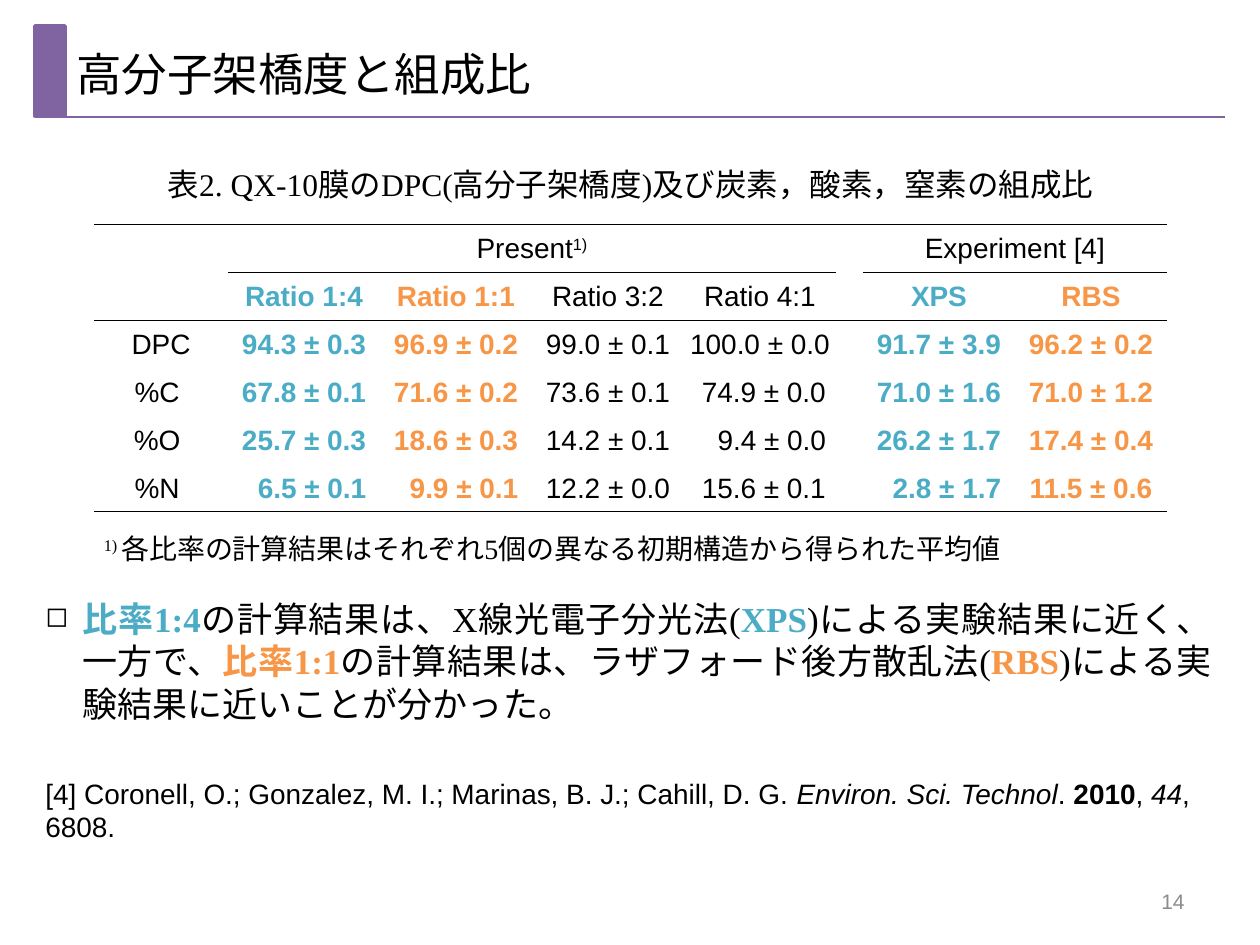
"""Build the slide on polymer cross-linking degree and composition."""
from lxml.etree import SubElement
from pptx import Presentation
from pptx.dml.color import RGBColor
from pptx.enum.lang import MSO_LANGUAGE_ID
from pptx.enum.shapes import MSO_CONNECTOR, MSO_SHAPE
from pptx.enum.text import MSO_ANCHOR, PP_ALIGN
from pptx.oxml.ns import qn
from pptx.util import Pt

EMU_PER_PX = 914400 // 126
BLACK = RGBColor(0, 0, 0)
WHITE = RGBColor(0xFF, 0xFF, 0xFF)
GRAY = RGBColor(0x8C, 0x8C, 0x8C)
PURPLE = RGBColor(0x80, 0x64, 0xA2)
TEAL = RGBColor(0x4B, 0xAC, 0xC6)
ORANGE = RGBColor(0xF7, 0x96, 0x46)
SANS, SERIF = "Arial", "Times New Roman"
BOLD, ITALIC, RAISED = "bold", "italic", "raised"
NO_STYLE = "{2D5ABB26-0587-4C30-8999-92F81FD0307C}"

TITLE = [("高分子架橋度と組成比",)]
CAPTION = [("表2. QX-10膜のDPC(高分子架橋度)及び炭素，酸素，窒素の組成比",)]
NOTE = [("1) ", BLACK, RAISED), ("各比率の計算結果はそれぞれ5個の異なる初期構造から得られた平均値",)]
FINDING = [
    ("比率1:4", TEAL, BOLD), ("の計算結果は、X線光電子分光法(",),
    ("XPS", TEAL, BOLD), (")による実験結果に近く、一方で、",),
    ("比率1:1", ORANGE, BOLD), ("の計算結果は、ラザフォード後方散乱法(",),
    ("RBS", ORANGE, BOLD), (")による実験結果に近いことが分かった。",),
]
REFERENCE = [
    ("[4] Coronell, O.; Gonzalez, M. I.; Marinas, B. J.; Cahill, D. G. ",),
    ("Environ. Sci. Technol", BLACK, ITALIC), (". ",), ("2010", BLACK, BOLD),
    (", ",), ("44", BLACK, ITALIC), (", 6808.",),
]
PAGE_NUMBER = [("14", GRAY)]

GROUPS = [
    (1, 4, [("Present",), ("1)", BLACK, RAISED)]),
    (6, 7, [("Experiment [4]",)]),
]
ROWS = [
    ["", "Ratio 1:4", "Ratio 1:1", "Ratio 3:2", "Ratio 4:1", "", "XPS", "RBS"],
    ["DPC", "94.3 ± 0.3", "96.9 ± 0.2", "99.0 ± 0.1", "100.0 ± 0.0", "", "91.7 ± 3.9", "96.2 ± 0.2"],
    ["%C ", "67.8 ± 0.1", "71.6 ± 0.2", "73.6 ± 0.1", " 74.9 ± 0.0", "", "71.0 ± 1.6", "71.0 ± 1.2"],
    ["%O ", "25.7 ± 0.3", "18.6 ± 0.3", "14.2 ± 0.1", " 9.4 ± 0.0", "", "26.2 ± 1.7", "17.4 ± 0.4"],
    ["%N ", "6.5 ± 0.1", "9.9 ± 0.1", "12.2 ± 0.0", " 15.6 ± 0.1", "", "2.8 ± 1.7", "11.5 ± 0.6"],
]
COLUMN_COLORS = {1: TEAL, 2: ORANGE, 6: TEAL, 7: ORANGE}
COLUMN_WIDTHS = [134, 152, 152, 152, 152, 27, 152, 152]
ROW_HEIGHT = 48
DIGIT_WIDTH = 16
ALL_COLUMNS = range(len(COLUMN_WIDTHS))
RULES = {0: ALL_COLUMNS, 1: (1, 2, 3, 4, 6, 7), 2: ALL_COLUMNS, 6: ALL_COLUMNS}


def px(*lengths):
    return [length * EMU_PER_PX for length in lengths]


def add_runs(paragraph, runs, size, font_name):
    for text, *look in runs:
        color, style = (look + [BLACK, None][len(look):])
        run = paragraph.add_run()
        run.text = text
        font = run.font
        font.size, font.name = Pt(size), font_name
        font.bold, font.italic = style == BOLD, style == ITALIC
        font.color.rgb = color
        font.language_id = MSO_LANGUAGE_ID.JAPANESE
        if style == RAISED:
            font._element.set("baseline", "30000")


def add_text(slide, box, runs, size, font_name, align=PP_ALIGN.LEFT, anchor=MSO_ANCHOR.MIDDLE):
    frame = slide.shapes.add_textbox(*px(*box)).text_frame
    frame.word_wrap = True
    frame.vertical_anchor = anchor
    paragraph = frame.paragraphs[0]
    paragraph.alignment = align
    add_runs(paragraph, runs, size, font_name)
    return paragraph


def add_bullet(paragraph, character, indent):
    properties = paragraph._p.get_or_add_pPr()
    properties.set("marL", str(indent))
    properties.set("indent", str(-indent))
    color = SubElement(properties, qn("a:buClr"))
    SubElement(color, qn("a:srgbClr"), val=str(BLACK))
    SubElement(properties, qn("a:buSzPct"), val="80000")
    SubElement(properties, qn("a:buChar"), char=character)


def add_border(cell, side, visible):
    line = SubElement(cell._tc.get_or_add_tcPr(), qn(f"a:ln{side}"), w=str(Pt(0.5)))
    if visible:
        fill = SubElement(line, qn("a:solidFill"))
        SubElement(fill, qn("a:srgbClr"), val=str(BLACK))
    else:
        SubElement(line, qn("a:noFill"))


def fill_cell(cell, runs, indent=0):
    paragraph = cell.text_frame.paragraphs[0]
    paragraph.alignment = PP_ALIGN.CENTER
    if indent:
        paragraph._p.get_or_add_pPr().set("marL", str(indent))
    add_runs(paragraph, runs, 16, SANS)


def add_results_table(slide):
    row_count = len(ROWS) + 1
    box = px(94, 224, sum(COLUMN_WIDTHS), row_count * ROW_HEIGHT)
    table = slide.shapes.add_table(row_count, len(COLUMN_WIDTHS), *box).table
    table.first_row = table.horz_banding = False
    table._tbl.tblPr.find(qn("a:tableStyleId")).text = NO_STYLE
    for column, width in zip(table.columns, px(*COLUMN_WIDTHS)):
        column.width = width
    for row_index, row in enumerate(table.rows):
        row.height = ROW_HEIGHT * EMU_PER_PX
        for column_index, cell in enumerate(row.cells):
            cell.margin_left, cell.margin_right, cell.margin_top, cell.margin_bottom = px(2, 2, 2, 0)
            cell.vertical_anchor = MSO_ANCHOR.MIDDLE
            for side, boundary in (("T", row_index), ("B", row_index + 1)):
                add_border(cell, side, column_index in RULES.get(boundary, ()))
            cell.fill.solid()
            cell.fill.fore_color.rgb = WHITE
    for first, last, runs in GROUPS:
        table.cell(0, first).merge(table.cell(0, last))
        fill_cell(table.cell(0, first), runs)
    for row_index, texts in enumerate(ROWS, 1):
        for column_index, text in enumerate(texts):
            if text:
                color = COLUMN_COLORS.get(column_index, BLACK)
                style = BOLD if column_index in COLUMN_COLORS else None
                one_digit = text.strip().find(".") == 1
                indent = DIGIT_WIDTH * EMU_PER_PX if one_digit else 0
                fill_cell(table.cell(row_index, column_index), [(text, color, style)], indent)


def add_title_bar(slide):
    bar = slide.shapes.add_shape(MSO_SHAPE.RECTANGLE, *px(35, 26, 30, 90))
    bar.shadow.inherit = False
    bar.fill.solid()
    bar.fill.fore_color.rgb = bar.line.color.rgb = PURPLE
    bar.line.width = Pt(2)


def add_title_underline(slide):
    underline = slide.shapes.add_connector(MSO_CONNECTOR.STRAIGHT, *px(50, 117, 1225, 117))
    underline.line.color.rgb = PURPLE
    underline.line.width = Pt(1)
    SubElement(underline._element.spPr, qn("a:effectLst"))


def main():
    presentation = Presentation()
    presentation.slide_width, presentation.slide_height = px(1260, 945)
    slide = presentation.slides.add_slide(presentation.slide_layouts[6])
    add_text(slide, (903, 876, 294, 50), PAGE_NUMBER, 12, SANS, PP_ALIGN.RIGHT)
    add_text(slide, (64, 40, 1160, 79), TITLE, 26, SANS, anchor=MSO_ANCHOR.TOP)
    add_title_bar(slide)
    add_results_table(slide)
    add_text(slide, (33, 770, 1191, 81), REFERENCE, 16, SANS, anchor=MSO_ANCHOR.TOP)
    finding = add_text(slide, (33, 591, 1191, 140), FINDING, 20, SERIF, PP_ALIGN.JUSTIFY)
    add_bullet(finding, "◻", 37 * EMU_PER_PX)
    add_text(slide, (35, 159, 1191, 50), CAPTION, 18, SERIF, PP_ALIGN.CENTER)
    add_text(slide, (83, 525, 939, 47), NOTE, 16, SERIF, PP_ALIGN.CENTER)
    add_title_underline(slide)
    presentation.save("out.pptx")


if __name__ == "__main__":
    main()
